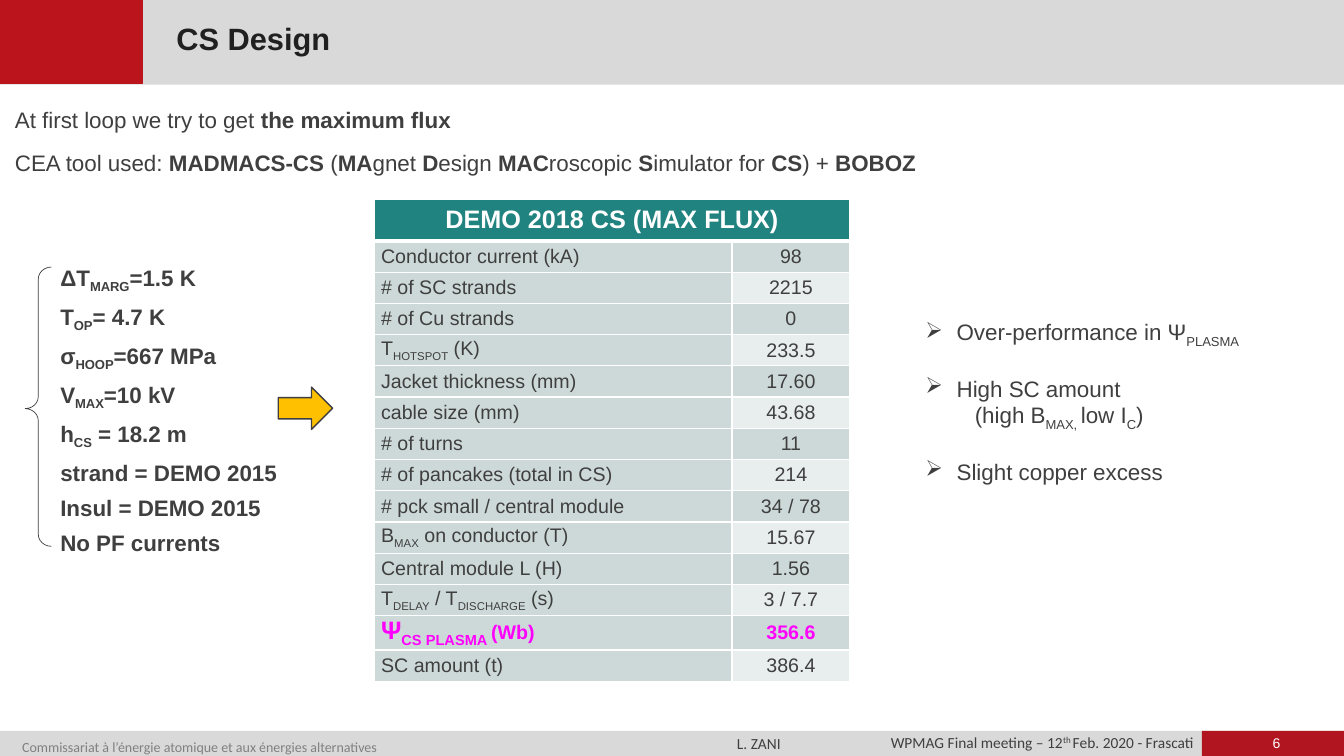
from lxml import etree
from pptx import Presentation
from pptx import util as u
from pptx.dml.color import RGBColor
from pptx.enum import shapes, text
from pptx.oxml.ns import qn

INK, GREY, RED, WHITE = "3F3F3F", "D9D9D9", "B1151F", "FFFFFF"
TEAL, PALE, LIGHT, PINK = "218380", "CDD9D8", "E8EDED", "FF00FF"
KIND = shapes.MSO_SHAPE
LEFT, MID, RIGHT, JUST = (text.PP_ALIGN.LEFT, text.PP_ALIGN.CENTER,
                          text.PP_ALIGN.RIGHT, text.PP_ALIGN.JUSTIFY)

ROWS = [
    ("Conductor current (kA)", "98"),
    ("# of SC strands", "2215"),
    ("# of Cu strands", "0"),
    ("T_HOTSPOT_ (K)", "233.5"),
    ("Jacket thickness (mm)", "17.60"),
    ("cable size (mm)", "43.68"),
    ("# of turns", "11"),
    ("# of pancakes (total in CS)", "214"),
    ("# pck small / central module", "34 / 78"),
    ("B_MAX_ on conductor (T)", "15.67"),
    ("Central module L (H)", "1.56"),
    ("T_DELAY_ / T_DISCHARGE_ (s)", "3 / 7.7"),
    ("~Ψ_CS PLASMA _~(Wb)", "356.6"),
    ("SC amount (t)", "386.4"),
]
INPUTS = ["ΔT_MARG_=1.5 K", "T_OP_= 4.7 K", "σ_HOOP_=667 MPa", "V_MAX_=10 kV",
          "h_CS_ = 18.2 m", "strand = DEMO 2015", "Insul = DEMO 2015",
          "No PF currents"]
INTRO = ["At first loop we try to get *the maximum flux*",
         "CEA tool used: *MADMACS-CS *(*MA*gnet *D*esign *MAC*roscopic "
         "*S*imulator for *CS*) + *BOBOZ*"]
# text, bulleted, space before in points
NOTES = [("Over-performance in Ψ_PLASMA_", True, 0),
         ("High SC amount", True, 18.4),
         ("(high B_MAX, _low I_C_)", False, 0),
         ("Slight copper excess", True, 18.4)]


def color(code):
    return RGBColor.from_string(code)


def write(para, words, size=16, font="Arial", ink=INK, bold=False,
          align=LEFT, line=None, before=0, big=18):
    """Marks toggle a format: * bold, _ subscript, ^ superscript, ~ big."""
    para.alignment = align
    para.space_before = u.Pt(before)
    if line:
        para.line_spacing = line
    state = dict.fromkeys("*_^~", False)
    parts = [""]
    for char in words:
        if char in state:
            parts += [char, ""]
        else:
            parts[-1] += char
    for part in parts:
        if part in state:
            state[part] = not state[part]
        elif part:
            run = para.add_run()
            run.text = part
            face = run.font
            face.name = font
            face.size = u.Pt(big if state["~"] else size)
            face.bold = bold or state["*"]
            face.color.rgb = color(ink)
            base = -25000 if state["_"] else 30000 if state["^"] else 0
            if base:
                run._r.get_or_add_rPr().set("baseline", str(base))


def label(slide, box, lines, pad=(0.1, 0.05), anchor="TOP", before=0, **form):
    frame = slide.shapes.add_textbox(*map(u.Inches, box)).text_frame
    frame.word_wrap = True
    frame.auto_size = text.MSO_AUTO_SIZE.SHAPE_TO_FIT_TEXT
    frame.vertical_anchor = text.MSO_ANCHOR[anchor]
    frame.margin_left = frame.margin_right = u.Inches(pad[0])
    frame.margin_top = frame.margin_bottom = u.Inches(pad[1])
    for i, words in enumerate(lines):
        para = frame.add_paragraph() if i else frame.paragraphs[0]
        write(para, words, before=before if i else 0, **form)
    return frame


def block(slide, kind, box, fill=None, edge=None, width=1):
    item = slide.shapes.add_shape(kind, *map(u.Inches, box))
    item.shadow.inherit = False
    if fill:
        item.fill.solid()
        item.fill.fore_color.rgb = color(fill)
    else:
        item.fill.background()
    if edge:
        item.line.color.rgb = color(edge)
        item.line.width = u.Pt(width)
    else:
        item.line.fill.background()
    return item


def header(slide, x, y, w, h):
    block(slide, KIND.RECTANGLE, (x, y, w, h), GREY)
    block(slide, KIND.RECTANGLE, (x - 0.01, y, 1.42, h - 0.01),
          "BC141C", "BC141C")
    label(slide, (x + 1.61, y + 0.24, 6.41, 0.41), ["CS Design"],
          pad=(0.14, 0.05), anchor="MIDDLE", size=22, ink="202020",
          bold=True, line=0.8)


def footer(slide, x, y, w, h):
    block(slide, KIND.RECTANGLE, (x, y, w, h), GREY)
    block(slide, KIND.RECTANGLE, (x + w - 1.41, y, 1.42, h), RED)
    slim = {"pad": (0.08, 0)}
    label(slide, (x + 8.58, y + 0.04, 3.34, 0.17),
          ["WPMAG Final meeting – 12^th ^Feb. 2020 - Frascati"],
          size=11, font="Calibri", align=RIGHT, line=0.9, **slim)
    label(slide, (x + 0.14, y + 0.01, 6.03, 0.21),
          ["Commissariat à l’énergie atomique et aux énergies alternatives"],
          size=10, font="Calibri", ink="808080", line=1.4, **slim)
    label(slide, (x + 7.23, y + 0.03, 0.7, 0.19), ["L. ZANI"],
          size=11, font="Calibri", **slim)
    label(slide, (x + 12.2, y + 0.04, 0.92, 0.17), ["6"],
          size=10, ink=WHITE, align=MID, **slim)


def inputs(slide, x, y, w, h):
    label(slide, (x + 0.25, y - 0.08, w - 0.25, h), INPUTS,
          bold=True, before=6)
    brace = block(slide, KIND.LEFT_BRACE, (x, y, 0.26, h), None, INK, 0.5)
    brace.adjustments[0] = 0.46
    brace.adjustments[1] = 0.507


def cell(item, words, fill, low=1, **form):
    """Fill one table cell; low is the width of its bottom border."""
    item.margin_left = item.margin_right = u.Inches(0.07)
    item.margin_top = item.margin_bottom = 0
    item.vertical_anchor = text.MSO_ANCHOR.MIDDLE
    props = item._tc.get_or_add_tcPr()
    for side in "LRTB":
        width = u.Pt(low if side == "B" else 1)
        edge = etree.SubElement(props, qn(f"a:ln{side}"), w=str(int(width)))
        solid = etree.SubElement(edge, qn("a:solidFill"))
        etree.SubElement(solid, qn("a:srgbClr"), val=WHITE)
    item.fill.solid()
    item.fill.fore_color.rgb = color(fill)
    write(item.text_frame.paragraphs[0], words, **form)


def results(slide, x, y, w, h):
    count = len(ROWS) + 1
    grid = slide.shapes.add_table(count, 2, *map(u.Inches, (x, y, w, h))).table
    grid.first_row = grid.horz_banding = False
    grid.columns[0].width = u.Inches(w - 1.17)
    grid.columns[1].width = u.Inches(1.17)
    for i, row in enumerate(grid.rows):
        row.height = u.Inches(0.31 if i else 0.41)
    grid.cell(0, 0).merge(grid.cell(0, 1))
    cell(grid.cell(0, 0), "DEMO 2018 CS (MAX FLUX)", TEAL, low=3,
         size=18, ink=WHITE, bold=True, align=MID)
    for i, (name, value) in enumerate(ROWS, 1):
        key = "Ψ" in name
        form = {"size": 14, "ink": PINK if key else INK, "bold": key}
        cell(grid.cell(i, 0), name, PALE, **form)
        cell(grid.cell(i, 1), value, PALE if i % 2 else LIGHT,
             align=MID, **form)


def notes(slide, x, y, w, h):
    frame = label(slide, (x, y, w, h), [])
    for i, (words, mark, gap) in enumerate(NOTES):
        para = frame.add_paragraph() if i else frame.paragraphs[0]
        props = para._p.get_or_add_pPr()
        props.set("marL", str(u.Inches(0.31 if mark else 0.49)))
        props.set("indent", str(u.Inches(-0.31 if mark else 0)))
        if mark:
            etree.SubElement(props, qn("a:buChar"), char="➢")
        write(para, words, before=gap)


def main():
    deck = Presentation()
    deck.slide_width, deck.slide_height = u.Inches(13.33), u.Inches(7.5)
    slide = deck.slides.add_slide(deck.slide_layouts[6])
    footer(slide, 0, 7.25, 13.33, 0.26)
    header(slide, 0, -0.03, 13.33, 0.87)
    label(slide, (0.05, 0.92, 9.76, 0.89), INTRO,
          align=JUST, line=u.Pt(25), before=6)
    inputs(slide, 0.25, 2.65, 2.69, 2.77)
    results(slide, 3.71, 1.98, 4.72, 4.75)
    notes(slide, 9.08, 3.11, 3.55, 1.72)
    block(slide, KIND.RIGHT_ARROW, (2.76, 3.84, 0.54, 0.42), "FFC000", INK)
    deck.save("out.pptx")


if __name__ == "__main__":
    main()
